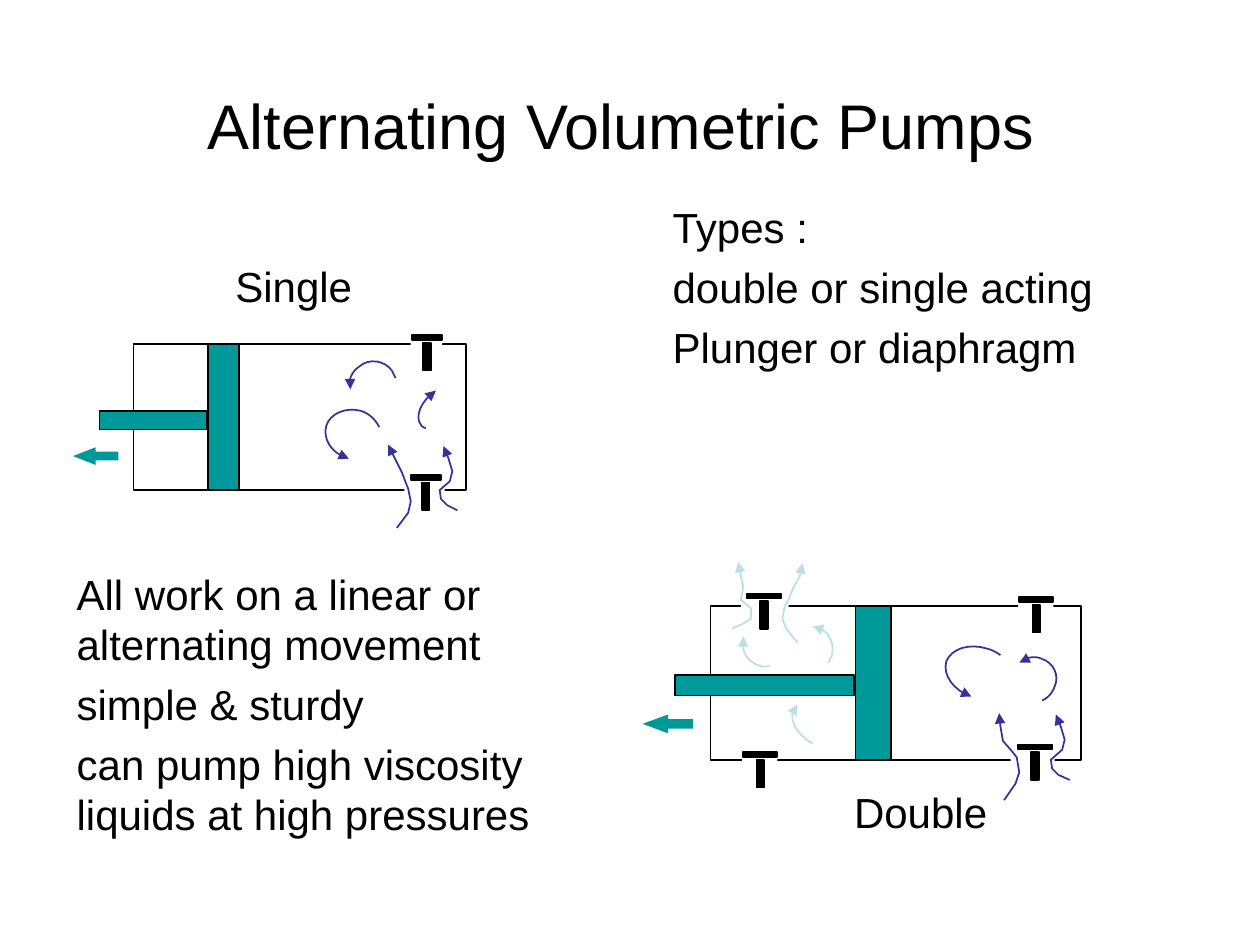
from lxml import etree
from pptx import Presentation
from pptx import util as u
from pptx.dml.color import RGBColor
from pptx.enum import shapes, text
from pptx.oxml.ns import qn

INCH = 2.54
TEAL, BLACK, WHITE, NAVY, PALE = "009999", "000000", "FFFFFF", "333399", "BBE0E3"

prs = Presentation()
prs.slide_width, prs.slide_height = u.Cm(25.4), u.Cm(19.05)
s = prs.slides.add_slide(prs.slide_layouts[6])


def paint(sp, fill=None, line=None):
    sp.shadow.inherit = False
    if fill:
        sp.fill.solid()
        sp.fill.fore_color.rgb = RGBColor.from_string(fill)
    else:
        sp.fill.background()
    if line:
        sp.line.color.rgb = RGBColor.from_string(line)
        sp.line.width = u.Pt(1)
    else:
        sp.line.fill.background()


def add_text(box, lines, size=24, color=BLACK, align="LEFT", anchor="TOP", wrap=True, hang=0):
    tf = s.shapes.add_textbox(*[u.Cm(INCH * v) for v in box]).text_frame
    tf.word_wrap = wrap
    tf.vertical_anchor = text.MSO_ANCHOR[anchor]
    for i, line in enumerate(lines):
        p = tf.add_paragraph() if i else tf.paragraphs[0]
        p.alignment = text.PP_ALIGN[align]
        p.space_before = u.Pt(5.5 if i else 0)
        if hang:
            pPr = p._p.get_or_add_pPr()
            pPr.set("marL", str(u.Cm(hang)))
            pPr.set("indent", str(-u.Cm(hang)))
        r = p.add_run()
        r.text = line
        r.font.name, r.font.size = "Arial", u.Pt(size)
        r.font.color.rgb = RGBColor.from_string(color)


add_text((0.43, 0.36, 9, 1.25), ["Alternating Volumetric Pumps"], size=36, align="CENTER", anchor="MIDDLE")
add_text((5.24, 1.55, 4.25, 1.5), ["Types :", "double or single acting", "Plunger or diaphragm"], hang=0.95)
add_text((0.51, 4.46, 4.25, 2), [
    "All work on a linear or alternating movement",
    "simple & sturdy",
    "can pump high viscosity liquids at high pressures",
])
add_text((1.77, 2.02, 1.14, 0.5), ["Single"], wrap=False)
add_text((6.68, 6.19, 1.27, 0.5), ["Double"], wrap=False)

cylinders = [(1.06, 2.73, 2.64, 1.16), (5.64, 4.81, 2.94, 1.22)]
ports = [(3.21, 3.85, 0.32, 0.08), (3.26, 2.69, 0.25, 0.07), (8.08, 4.78, 0.28, 0.07),
         (8.02, 5.99, 0.35, 0.08), (5.88, 4.79, 0.38, 0.07), (5.89, 6.01, 0.28, 0.07)]
valves = [(3.26, 3.77, 0.24), (3.27, 2.66, 0.24), (8.09, 4.74, 0.27),
          (8.08, 5.91, 0.27), (5.93, 4.71, 0.27), (5.9, 5.97, 0.27)]
pistons = [(0.79, 3.26, 0.85, 0.15), (1.65, 2.73, 0.25, 1.16),
           (5.36, 5.36, 1.42, 0.16), (6.79, 4.81, 0.28, 1.22)]

parts = [(box, None, BLACK) for box in cylinders]
parts += [(box, WHITE, None) for box in ports]
for x, y, w in valves:
    parts.append(((x, y, w, 0.04), BLACK, BLACK))
    parts.append(((x + w / 2 - 0.03, y + 0.06, 0.06, 0.22), BLACK, BLACK))
parts += [(box, TEAL, BLACK) for box in pistons]
for box, fill, line in parts:
    sp = s.shapes.add_shape(shapes.MSO_SHAPE.RECTANGLE, *[u.Cm(INCH * v) for v in box])
    paint(sp, fill, line)

for box, head in [((0.58, 3.55, 0.36, 0.14), 1.28), ((5.1, 5.67, 0.4, 0.15), 1.36)]:
    sp = s.shapes.add_shape(shapes.MSO_SHAPE.RIGHT_ARROW, *[u.Cm(INCH * v) for v in box])
    sp.adjustments[0], sp.adjustments[1] = 0.5, head
    sp._element.spPr.get_or_add_xfrm().set("flipH", "1")
    paint(sp, TEAL)

streams = [
    (NAVY, [(3.63, 4.05), (3.55, 4.01), (3.5, 3.96), (3.49, 3.89), (3.57, 3.82), (3.59, 3.74), (3.56, 3.64), (3.52, 3.54)]),
    (NAVY, [(3.15, 4.19), (3.24, 4.07), (3.26, 3.98), (3.24, 3.88), (3.22, 3.83), (3.19, 3.75), (3.13, 3.63), (3.08, 3.53)]),
    (NAVY, [(8.49, 6.19), (8.4, 6.15), (8.35, 6.1), (8.34, 6.03), (8.43, 5.95), (8.45, 5.87), (8.42, 5.77), (8.38, 5.67)]),
    (NAVY, [(7.97, 6.35), (8.06, 6.22), (8.09, 6.13), (8.07, 6.01), (8.03, 5.96), (7.96, 5.88), (7.94, 5.76), (7.93, 5.66)]),
    (PALE, [(5.81, 4.99), (5.9, 4.95), (5.96, 4.91), (5.96, 4.83), (5.88, 4.76), (5.9, 4.66), (5.88, 4.57), (5.86, 4.46)]),
    (PALE, [(6.33, 5.1), (6.24, 4.99), (6.21, 4.91), (6.23, 4.81), (6.26, 4.76), (6.29, 4.68), (6.35, 4.57), (6.37, 4.47)]),
]
swirls = [
    (NAVY, "headEnd", [(2.77, 3.64), (2.76, 3.63), (2.75, 3.63), (2.74, 3.63), (2.63, 3.59), (2.56, 3.48), (2.59, 3.38),
                       (2.62, 3.28), (2.75, 3.23), (2.86, 3.26), (2.93, 3.28), (2.98, 3.33), (3.01, 3.39)]),
    (NAVY, "headEnd", [(2.78, 3.09), (2.76, 3.02), (2.79, 2.95), (2.85, 2.91), (2.93, 2.84), (3.05, 2.86), (3.11, 2.94),
                       (3.12, 2.96), (3.13, 2.98), (3.14, 3)]),
    (NAVY, "tailEnd", [(3.38, 3.4), (3.36, 3.39), (3.35, 3.39), (3.34, 3.37), (3.29, 3.31), (3.34, 3.18), (3.46, 3.1)]),
    (NAVY, "headEnd", [(7.71, 5.53), (7.57, 5.48), (7.48, 5.36), (7.51, 5.25), (7.55, 5.15), (7.69, 5.1), (7.84, 5.15),
                       (7.88, 5.16), (7.91, 5.18), (7.94, 5.2)]),
    (NAVY, "headEnd", [(8.09, 5.26), (8.14, 5.22), (8.21, 5.2), (8.27, 5.23), (8.36, 5.26), (8.41, 5.36), (8.37, 5.45),
                       (8.35, 5.5), (8.32, 5.54), (8.27, 5.56)]),
    (PALE, "headEnd", [(6.45, 4.97), (6.47, 4.97), (6.48, 4.97), (6.49, 4.98), (6.58, 5.01), (6.63, 5.11), (6.6, 5.21),
                       (6.59, 5.23), (6.58, 5.25), (6.57, 5.26)]),
    (PALE, "tailEnd", [(6.11, 5.28), (6.1, 5.29), (6.08, 5.29), (6.06, 5.29), (5.96, 5.28), (5.88, 5.19), (5.9, 5.09),
                       (5.9, 5.07), (5.9, 5.06), (5.9, 5.05)]),
    (PALE, "tailEnd", [(6.45, 5.9), (6.43, 5.89), (6.41, 5.88), (6.39, 5.86), (6.3, 5.79), (6.26, 5.68), (6.31, 5.61),
                       (6.32, 5.61), (6.32, 5.6), (6.33, 5.59)]),
]

flows = [(color, "tailEnd", points) for color, points in streams]
for color, end, knots in swirls:
    points = [knots[0]]
    for i in range(0, len(knots) - 1, 3):
        for t in [n / 8 for n in range(1, 9)]:
            weights = ((1 - t) ** 3, 3 * t * (1 - t) ** 2, 3 * t ** 2 * (1 - t), t ** 3)
            points.append(tuple(sum(w * k[axis] for w, k in zip(weights, knots[i:i + 4])) for axis in (0, 1)))
    flows.append((color, end, points))

for color, end, points in flows:
    start, *rest = [(u.Cm(INCH * x), u.Cm(INCH * y)) for x, y in points]
    fb = s.shapes.build_freeform(*start)
    fb.add_line_segments(rest, close=False)
    sp = fb.convert_to_shape()
    paint(sp, line=color)
    etree.SubElement(sp.line._get_or_add_ln(), qn("a:" + end), type="triangle")

prs.save("out.pptx")
